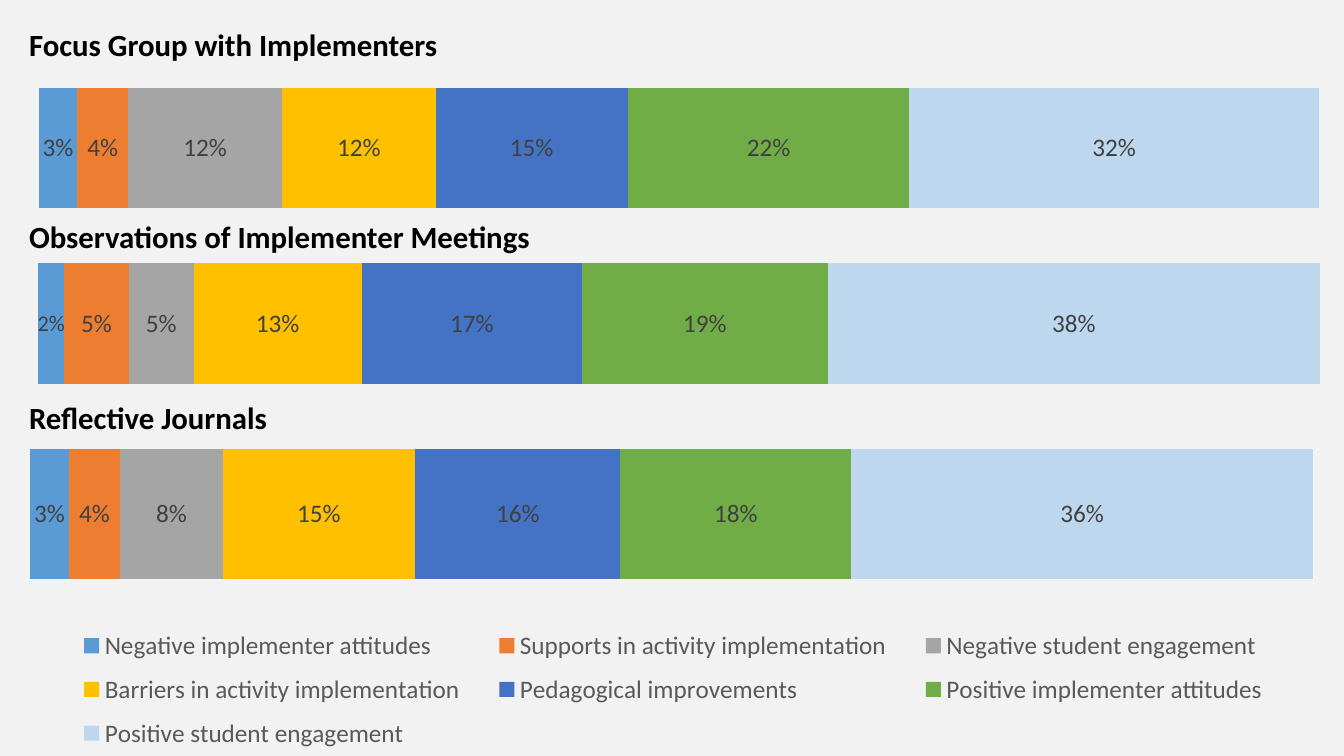
import pptx
import pptx.chart.data
import pptx.dml.color
import pptx.enum.chart
import pptx.enum.text
import pptx.oxml
import pptx.oxml.ns
import pptx.util

Inches = pptx.util.Inches
Pt = pptx.util.Pt

THEMES = {
    "Negative implementer attitudes": "5B9BD5",
    "Supports in activity implementation": "ED7D31",
    "Negative student engagement": "A5A5A5",
    "Barriers in activity implementation": "FFC000",
    "Pedagogical improvements": "4472C4",
    "Positive implementer attitudes": "70AD47",
    "Positive student engagement": "BDD7EE",
}


def colour(value):
    return pptx.dml.color.RGBColor.from_string(value)


def manual_layout(box, inner=False):
    target = '<c:layoutTarget val="inner"/>' if inner else ""
    modes = "".join(f'<c:{side}Mode val="edge"/>' for side in "xy")
    extents = "".join(f'<c:{side} val="{share}"/>' for side, share in zip("xywh", box))
    return pptx.oxml.parse_xml(
        f'<c:layout {pptx.oxml.ns.nsdecls("c")}><c:manualLayout>'
        f"{target}{modes}{extents}</c:manualLayout></c:layout>"
    )


class ThemeSlide:
    typeface = "Calibri"

    def __init__(self, deck):
        self.slide = deck.slides.add_slide(deck.slide_layouts[6])
        background = self.slide.background.fill
        background.solid()
        background.fore_color.rgb = colour("F2F2F2")

    def style(self, font, size, shade):
        font.name = self.typeface
        font.size = Pt(size)
        font.color.rgb = colour(shade)

    def heading(self, wording, top, width):
        box = self.slide.shapes.add_textbox(
            Inches(0.19), Inches(top), Inches(width), Inches(0.47)
        )
        frame = box.text_frame
        frame.word_wrap = True
        frame.auto_size = pptx.enum.text.MSO_AUTO_SIZE.SHAPE_TO_FIT_TEXT
        run = frame.paragraphs[0].add_run()
        run.text = wording
        run.font.bold = True
        self.style(run.font, 22, "000000")

    def stacked_bar(self, place, shares, plot_box, first_size=18, legend_box=None):
        data = pptx.chart.data.CategoryChartData(number_format="0%")
        data.categories = ["1"]
        for theme, share in zip(THEMES, shares):
            data.add_series(theme, [share])
        chart = self.slide.shapes.add_chart(
            pptx.enum.chart.XL_CHART_TYPE.BAR_STACKED_100,
            *map(Inches, place),
            data,
        ).chart
        self.style(chart.font, 18, "000000")
        chart.has_title = False
        for axis in (chart.category_axis, chart.value_axis):
            axis.visible = False
            axis.has_major_gridlines = False
        chart.value_axis.tick_labels.number_format = "0%"
        bars = chart.plots[0]
        bars.gap_width = 150
        bars.overlap = 100
        bars.vary_by_categories = False
        for index, (segment, shade) in enumerate(zip(bars.series, THEMES.values())):
            segment.format.fill.solid()
            segment.format.fill.fore_color.rgb = colour(shade)
            labels = segment.data_labels
            labels.show_value = True
            labels.number_format = "0%"
            labels.number_format_is_linked = False
            labels.position = pptx.enum.chart.XL_LABEL_POSITION.CENTER
            self.style(labels.font, 18 if index else first_size, "404040")
        plot_area = chart.element.chart.plotArea
        for automatic in plot_area.findall(pptx.oxml.ns.qn("c:layout")):
            plot_area.remove(automatic)
        plot_area.insert(0, manual_layout(plot_box, inner=True))
        chart.has_legend = legend_box is not None
        if legend_box:
            self.legend(chart, legend_box)

    def legend(self, chart, box):
        key = chart.legend
        key.position = pptx.enum.chart.XL_LEGEND_POSITION.BOTTOM
        key.include_in_layout = False
        self.style(key.font, 18, "595959")
        element = chart.element.chart.find(pptx.oxml.ns.qn("c:legend"))
        for automatic in element.findall(pptx.oxml.ns.qn("c:layout")):
            element.remove(automatic)
        element.find(pptx.oxml.ns.qn("c:legendPos")).addnext(manual_layout(box))


def main():
    deck = pptx.Presentation()
    deck.slide_width = Inches(13.33)
    deck.slide_height = Inches(7.5)
    findings = ThemeSlide(deck)
    findings.stacked_bar(
        (0, 2.46, 13.09, 5.31),
        (0.03, 0.04, 0.08, 0.15, 0.16, 0.18, 0.36),
        (0.023, 0.195, 0.972, 0.604),
        legend_box=(0.04, 0.69, 0.94, 0.27),
    )
    findings.heading("Reflective Journals", 3.91, 3.95)
    findings.heading("Observations of Implementer Meetings", 2.11, 5.9)
    findings.stacked_bar(
        (0.08, 1.43, 13.01, 3.33),
        (0.02, 0.05, 0.05, 0.13, 0.17, 0.19, 0.38),
        (0.023, 0.085, 0.977, 0.901),
        first_size=16,
    )
    findings.heading("Focus Group with Implementers", 0.21, 5.71)
    findings.stacked_bar(
        (0.19, -0.07, 13.01, 3.25),
        (0.03, 0.04, 0.12, 0.12, 0.15, 0.22, 0.32),
        (0.015, 0.016, 0.976, 0.915),
    )
    deck.save("out.pptx")


if __name__ == "__main__":
    main()
